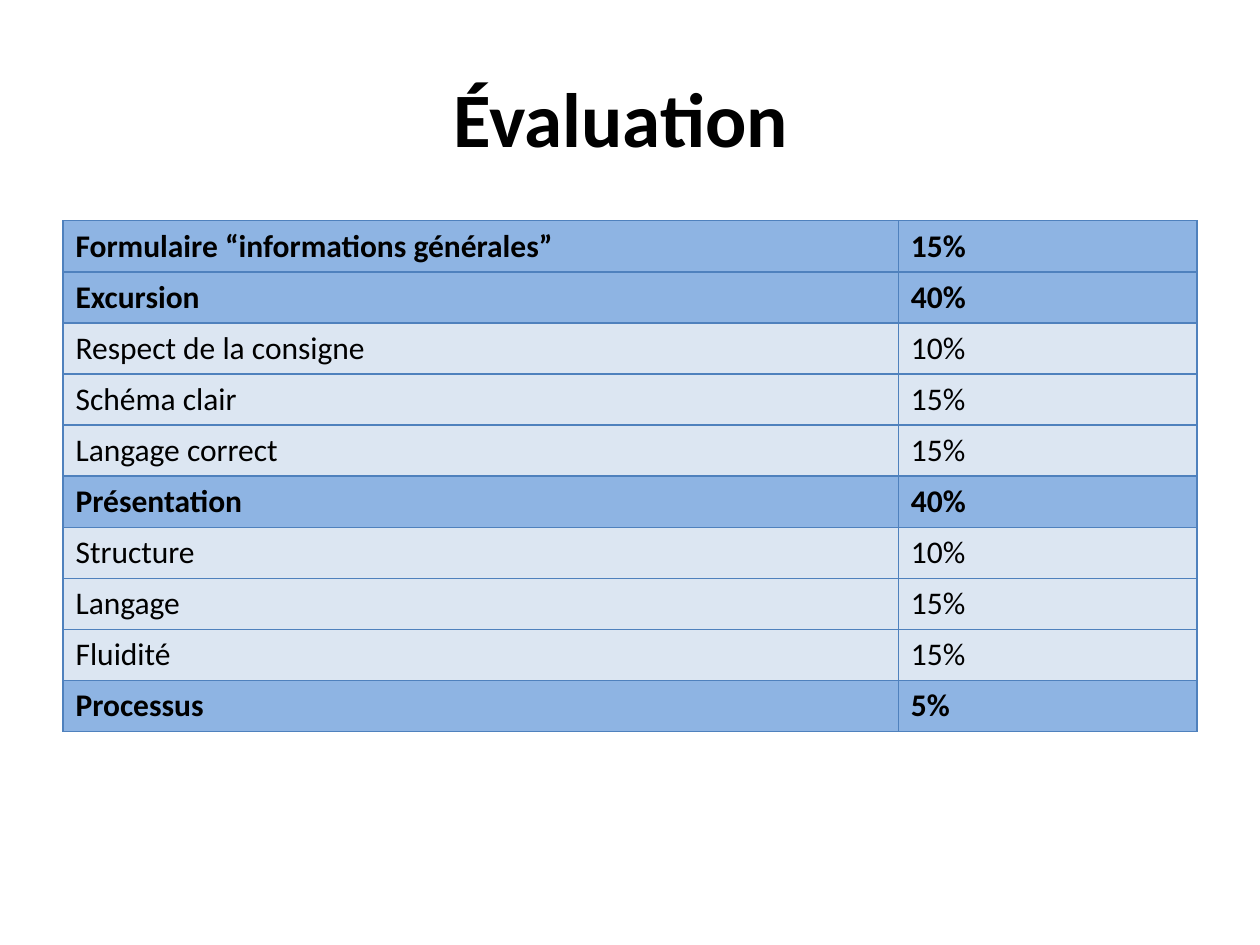
from dataclasses import dataclass

from lxml.etree import SubElement
from pptx import Presentation
from pptx.dml.color import RGBColor
from pptx.enum.text import MSO_ANCHOR as Anchor, PP_ALIGN as Align
from pptx.oxml.ns import qn
from pptx.util import Cm, Pt


@dataclass(frozen=True)
class Theme:
    font: str = "Calibri"
    text: str = "000000"
    border: str = "4F81BD"
    section_fill: str = "8EB4E3"
    detail_fill: str = "DCE6F2"
    title_size: int = 44
    table_size: int = 18
    border_width: int = 1


THEME = Theme()
LEFT, WIDTH = Cm(1.27), Cm(22.86)
ROW_HEIGHT = Cm(1.03)
COLUMN_WIDTHS = (Cm(16.84), Cm(6.02))

CRITERIA = [
    ("Formulaire “informations générales”", "15%", True),
    ("Excursion", "40%", True),
    ("Respect de la consigne", "10%", False),
    ("Schéma clair", "15%", False),
    ("Langage correct", "15%", False),
    ("Présentation", "40%", True),
    ("Structure", "10%", False),
    ("Langage", "15%", False),
    ("Fluidité", "15%", False),
    ("Processus", "5%", True),
]


def write_text(text_frame, text, size, bold):
    text_frame.text = text
    font = text_frame.paragraphs[0].runs[0].font
    font.name = THEME.font
    font.size = Pt(size)
    font.bold = bold
    font.color.rgb = RGBColor.from_string(THEME.text)


def add_title(slide, text):
    shape = slide.shapes.add_textbox(LEFT, Cm(0.76), WIDTH, Cm(3.18))
    text_frame = shape.text_frame
    text_frame.word_wrap = True
    text_frame.vertical_anchor = Anchor.MIDDLE
    write_text(text_frame, text, THEME.title_size, True)
    text_frame.paragraphs[0].alignment = Align.CENTER


def add_borders(cell):
    properties = cell._tc.get_or_add_tcPr()
    for side in ("lnL", "lnR", "lnT", "lnB"):
        line = SubElement(properties, qn(f"a:{side}"), w=str(Pt(THEME.border_width)))
        fill = SubElement(line, qn("a:solidFill"))
        SubElement(fill, qn("a:srgbClr"), val=THEME.border)


def format_cell(cell, text, is_section):
    write_text(cell.text_frame, text, THEME.table_size, is_section)
    add_borders(cell)
    cell.fill.solid()
    color = THEME.section_fill if is_section else THEME.detail_fill
    cell.fill.fore_color.rgb = RGBColor.from_string(color)


def add_criteria_table(slide, criteria):
    height = ROW_HEIGHT * len(criteria)
    frame = slide.shapes.add_table(
        len(criteria), len(COLUMN_WIDTHS), LEFT, Cm(4.45), WIDTH, height
    )
    table = frame.table
    table.first_row = False
    table.horz_banding = False
    for column, width in zip(table.columns, COLUMN_WIDTHS):
        column.width = width
    for row, (label, weight, is_section) in zip(table.rows, criteria):
        row.height = ROW_HEIGHT
        for cell, text in zip(row.cells, (label, weight)):
            format_cell(cell, text, is_section)


def main():
    presentation = Presentation()
    presentation.slide_width = Cm(25.4)
    presentation.slide_height = Cm(19.05)
    slide = presentation.slides.add_slide(presentation.slide_layouts[6])
    add_title(slide, "Évaluation ")
    add_criteria_table(slide, CRITERIA)
    presentation.save("out.pptx")


if __name__ == "__main__":
    main()
